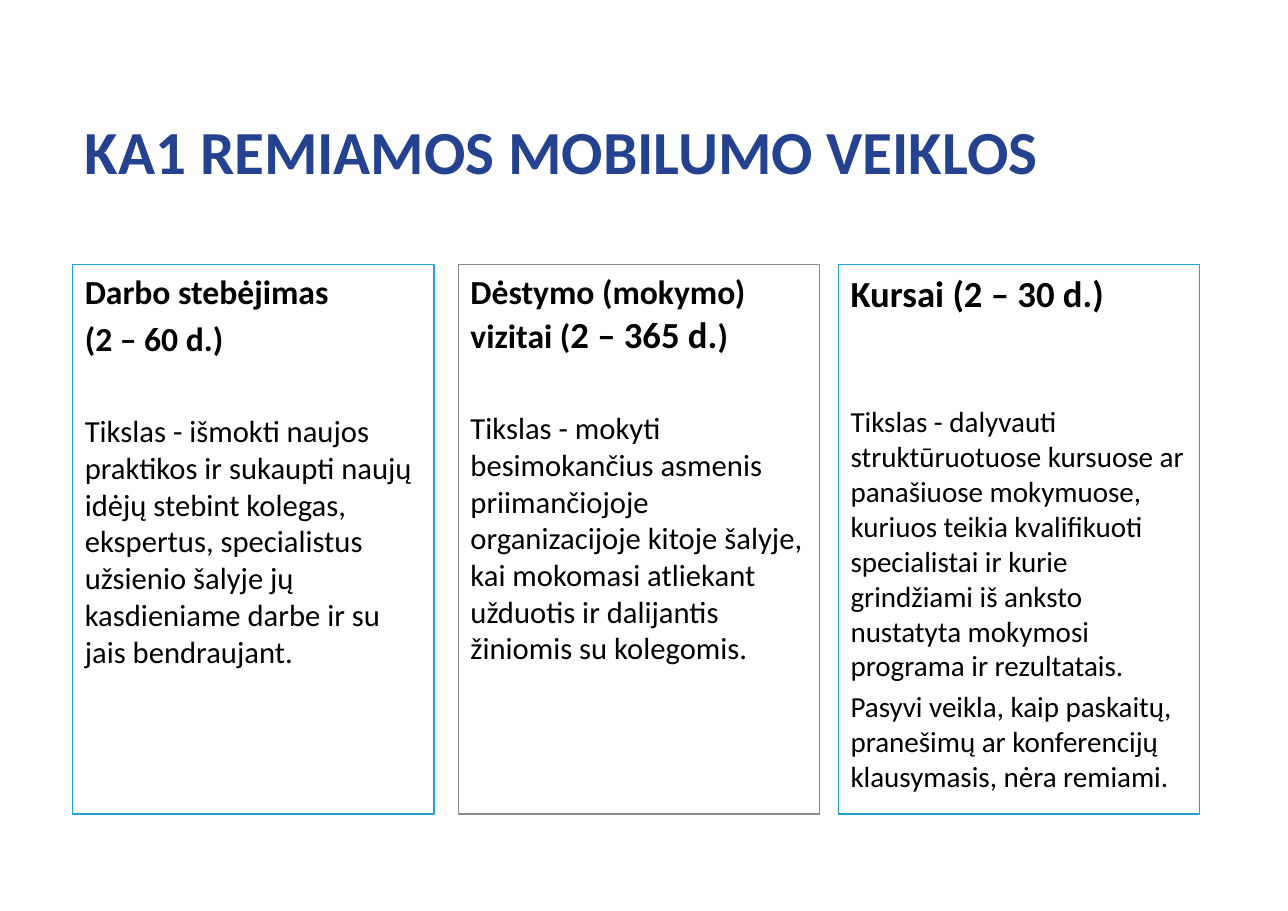
from pptx import Presentation
from pptx.dml.color import RGBColor
from pptx.enum.shapes import MSO_SHAPE
from pptx.enum.text import MSO_ANCHOR, PP_ALIGN
from pptx.util import Inches, Pt

RECTANGLE = MSO_SHAPE.RECTANGLE
TOP, MIDDLE = MSO_ANCHOR.TOP, MSO_ANCHOR.MIDDLE
LEFT = PP_ALIGN.LEFT
NAVY = RGBColor(0x24, 0x42, 0x90)
BLACK = RGBColor(0x00, 0x00, 0x00)
SKY = RGBColor(0x1F, 0xA0, 0xE1)
GREY = RGBColor(0x8C, 0x8C, 0x8C)
FONT = "Calibri"

TITLE_BOX = (0.66, 0.67, 9.93, 1.38)
COLUMN_TOP, COLUMN_WIDTH, COLUMN_HEIGHT = 2.4, 3.28, 4.99

# Each paragraph: space before in points, bold, then (text, size) spans.
ACTIVITIES = [
    (0.66, SKY, [
        (0, True, [("Darbo stebėjimas", 22)]),
        (4.4, True, [("(2 – 60 d.)", 22)]),
        (35, False, [("Tikslas - išmokti naujos praktikos ir sukaupti naujų idėjų "
                      "stebint kolegas, ekspertus, specialistus užsienio šalyje jų "
                      "kasdieniame darbe ir su jais bendraujant.", 20)]),
    ]),
    (4.16, GREY, [
        (0, True, [("Dėstymo (mokymo) vizitai (", 22), ("2 – 365 d.", 24), (")", 22)]),
        (35, False, [("Tikslas - mokyti besimokančius asmenis priimančiojoje "
                      "organizacijoje kitoje šalyje, kai mokomasi atliekant užduotis "
                      "ir dalijantis žiniomis su kolegomis.", 20)]),
    ]),
    (7.61, SKY, [
        (0, True, [("Kursai (2 – 30 d.)", 24)]),
        (58, False, [("Tikslas - dalyvauti struktūruotuose kursuose ar panašiuose "
                      "mokymuose, kuriuos teikia kvalifikuoti specialistai ir kurie "
                      "grindžiami iš anksto nustatyta mokymosi programa ir "
                      "rezultatais.", 19)]),
        (3.8, False, [("Pasyvi veikla, kaip paskaitų, pranešimų ar konferencijų "
                       "klausymasis, nėra remiami.", 19)]),
    ]),
]


def write_paragraphs(shape, paragraphs, color, anchor):
    """Fill a shape with left-aligned, wrapped paragraphs."""
    frame = shape.text_frame
    frame.word_wrap = True
    frame.vertical_anchor = anchor
    frame.margin_left = frame.margin_right = Inches(0.11)
    frame.margin_top = frame.margin_bottom = Inches(0.06)
    for index, (space, bold, spans) in enumerate(paragraphs):
        para = frame.add_paragraph() if index else frame.paragraphs[0]
        para.alignment = LEFT
        if space:
            para.space_before = Pt(space)
        for text, size in spans:
            span = para.add_run()
            span.text = text
            span.font.name = FONT
            span.font.size = Pt(size)
            span.font.bold = bold
            span.font.color.rgb = color


def add_title(page, box):
    """Place the slide heading in the given box."""
    title = page.shapes.add_textbox(*map(Inches, box))
    heading = [(0, True, [("KA1 REMIAMOS MOBILUMO VEIKLOS", 40)])]
    write_paragraphs(title, heading, NAVY, MIDDLE)


def add_activity(page, box, outline, paragraphs):
    """Place one outlined activity column in the given box."""
    column = page.shapes.add_shape(RECTANGLE, *map(Inches, box))
    column.shadow.inherit = False
    column.fill.background()
    column.line.color.rgb = outline
    column.line.width = Pt(0.75)
    write_paragraphs(column, paragraphs, BLACK, TOP)


def main():
    """Build the slide and save the deck."""
    deck = Presentation()
    deck.slide_width, deck.slide_height = Inches(11.69), Inches(8.27)
    page = deck.slides.add_slide(deck.slide_layouts[6])
    add_title(page, TITLE_BOX)
    for left, outline, paragraphs in ACTIVITIES:
        box = (left, COLUMN_TOP, COLUMN_WIDTH, COLUMN_HEIGHT)
        add_activity(page, box, outline, paragraphs)
    deck.save("out.pptx")


if __name__ == "__main__":
    main()
